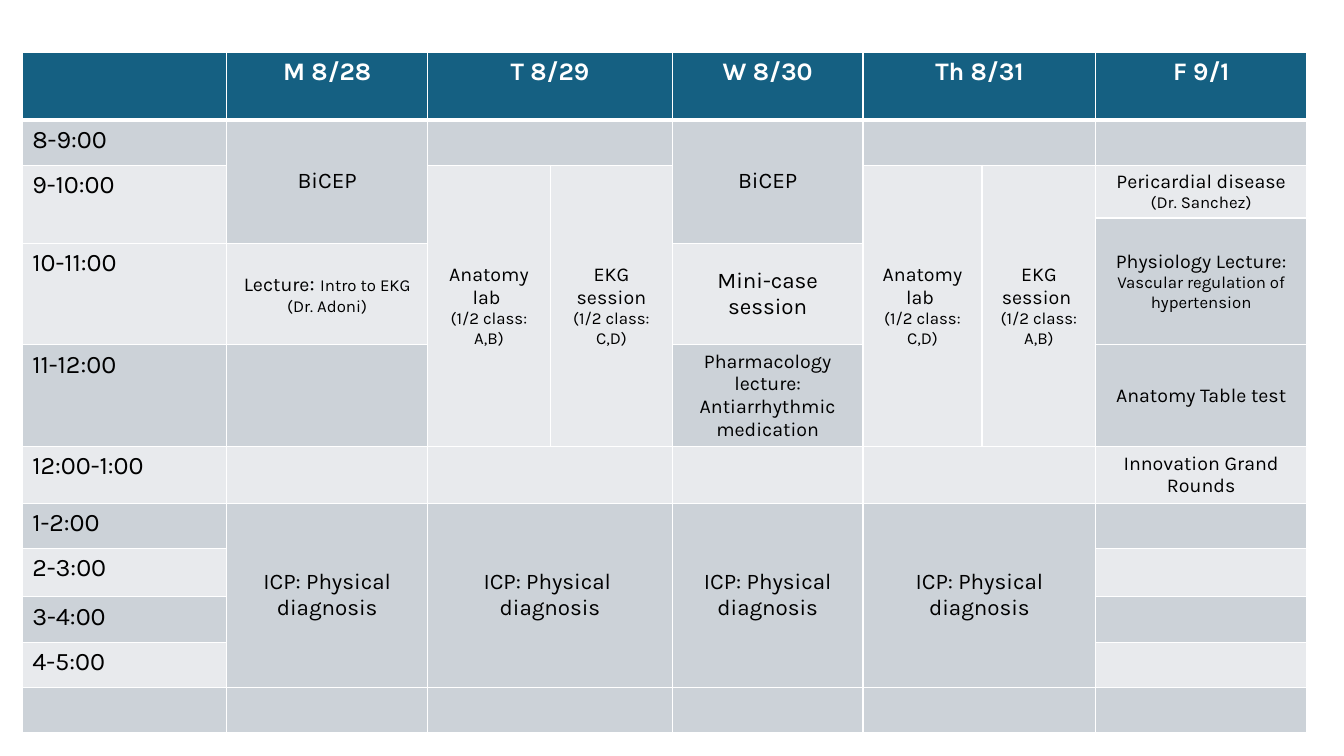
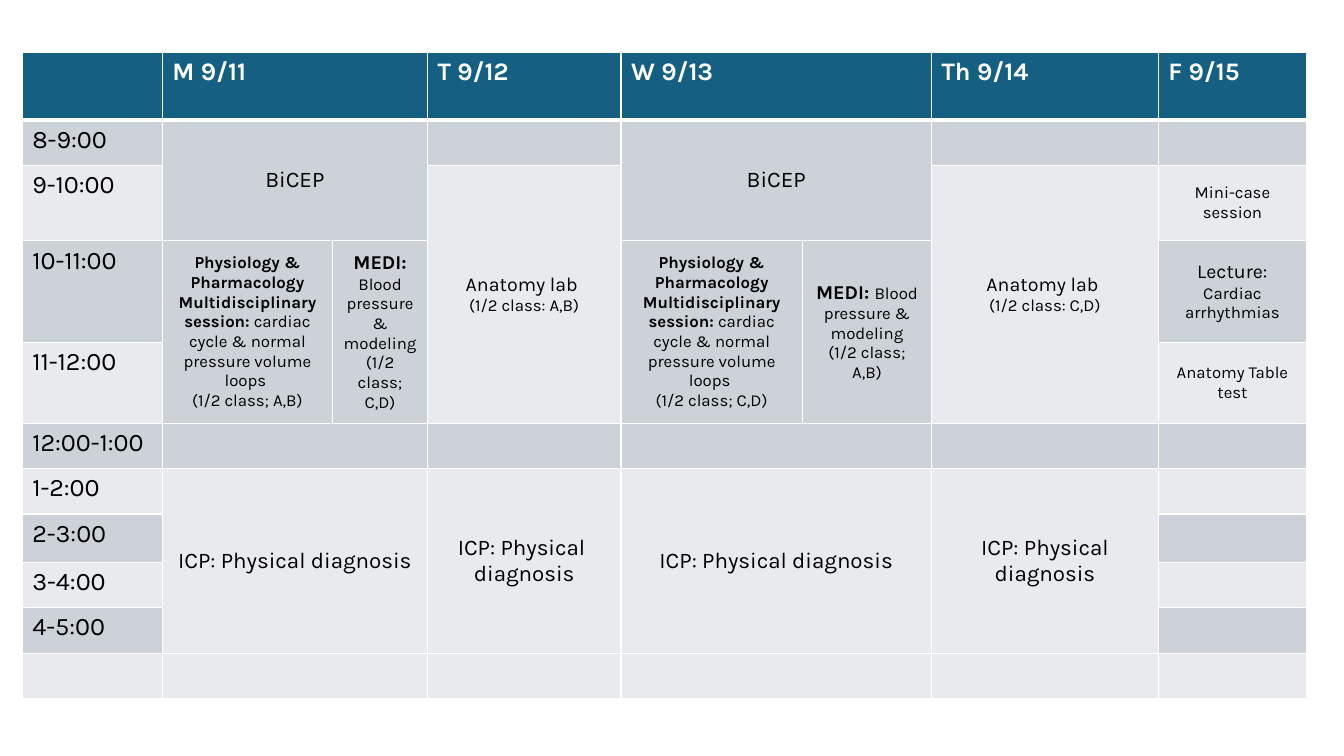
from dataclasses import dataclass

from lxml.etree import SubElement
from pptx import Presentation
from pptx.dml.color import RGBColor
from pptx.enum.text import MSO_ANCHOR as Anchor, PP_ALIGN as Align
from pptx.oxml.ns import qn
from pptx.util import Pt

PX = 9144  # 100 px to the inch
SLIDE_SIZE = (1333, 750)
TABLE_LEFT, TABLE_TOP = 22, 52

FONT = "Karla"
HEADER_BLUE = RGBColor(0x15, 0x60, 0x82)
DARK_BAND = RGBColor(0xCC, 0xD2, 0xD8)
LIGHT_BAND = RGBColor(0xE8, 0xEA, 0xED)
WHITE = RGBColor(0xFF, 0xFF, 0xFF)
BLACK = RGBColor(0x00, 0x00, 0x00)

HOURS = ["8-9:00", "9-10:00", "10-11:00", "11-12:00", "12:00-1:00",
         "1-2:00", "2-3:00", "3-4:00", "4-5:00"]


@dataclass
class Event:
    """A block of the timetable; each paragraph is a list of (text, size, bold)."""
    row: int
    column: int
    paragraphs: list
    rows: int = 1
    columns: int = 1


@dataclass
class Week:
    days: list          # (heading, first column, column count)
    heading_align: Align
    columns: list
    rows: list
    hour_rows: list     # (first row, row count) of each hour
    open_rows: list     # rows in which each day is one undivided cell
    events: list


# Content of the blocks
def plain(text, size):
    return [[(text, size, False)]]


def split_class(title, half):
    return plain(title, 14) + plain(f"(1/2 class: {half})", 12)


def physiology(half):
    return [[("Physiology & Pharmacology Multidisciplinary session:", 12, True),
             (" cardiac cycle & normal pressure volume loops ", 12, False)],
            [(f"(1/2 class; {half})", 12, False)]]


def modeling(half):
    return [[("MEDI: ", 14, True), ("Blood pressure & modeling", 12, False)],
            [(f"(1/2 class; {half})", 12, False)]]


def diagnosis_events(days, row):
    """Four afternoon hours on every day but Friday; Tuesday breaks its line."""
    events = []
    for index, (_, column, count) in enumerate(days[:4]):
        text = plain("ICP: Physical diagnosis", 16)
        if index == 1:
            text = plain("ICP: Physical ", 16) + plain("diagnosis", 16)
        events.append(Event(row, column, text, 4, count))
    return events


AUGUST_DAYS = [("M 8/28", 1, 1), ("T 8/29", 2, 2), ("W 8/30", 4, 1),
               ("Th 8/31", 5, 2), ("F 9/1", 7, 1)]
AUGUST = Week(
    days=AUGUST_DAYS,
    heading_align=Align.CENTER,
    columns=[203, 199, 122, 121, 189, 118, 113, 209],
    rows=[67, 45, 52, 25, 101, 101, 56, 45, 48, 45, 45, 45],
    hour_rows=[(1, 1), (2, 2)] + [(row, 1) for row in range(4, 11)],
    open_rows=[0, 1, 6, 11],
    events=[
        Event(1, 1, plain("BiCEP", 16), rows=3),
        Event(1, 4, plain("BiCEP", 16), rows=3),
        Event(2, 2, split_class("Anatomy lab ", "A,B"), rows=4),
        Event(2, 3, [[("EKG session ", 14, False),
                      ("(1/2 class: C,D)", 12, False)]], rows=4),
        Event(2, 5, split_class("Anatomy lab ", "C,D"), rows=4),
        Event(2, 6, split_class("EKG session ", "A,B"), rows=4),
        Event(2, 7, [[("Pericardial disease ", 14, False),
                      ("(Dr. Sanchez)", 12, False)]]),
        Event(3, 7, [[("Physiology Lecture:", 14, False),
                      (" Vascular regulation of hypertension", 12, False)]], rows=2),
        Event(4, 1, [[("Lecture", 14, False), (": ", 16, False),
                      ("Intro to EKG (Dr. Adoni)", 12, False)]]),
        Event(4, 4, plain("Mini-case session", 16)),
        Event(5, 4, plain("Pharmacology lecture: Antiarrhythmic medication", 14)),
        Event(5, 7, plain("Anatomy Table test", 14)),
        Event(6, 7, plain("Innovation Grand Rounds", 14)),
    ] + diagnosis_events(AUGUST_DAYS, 7),
)

SEPTEMBER_DAYS = [("M 9/11", 1, 2), ("T 9/12", 3, 1), ("W 9/13", 4, 2),
                  ("Th 9/14", 6, 1), ("F 9/15", 7, 1)]
SEPTEMBER = Week(
    days=SEPTEMBER_DAYS,
    heading_align=Align.LEFT,
    columns=[139, 169, 94, 192, 180, 128, 225, 147],
    rows=[67, 45, 75, 101, 80, 45, 45, 48, 45, 45, 45],
    hour_rows=[(row, 1) for row in range(1, 10)],
    open_rows=[0, 5, 10],
    events=[
        Event(1, 1, plain("BiCEP", 16), rows=2, columns=2),
        Event(1, 4, plain("BiCEP", 16), rows=2, columns=2),
        Event(2, 3, split_class("Anatomy lab ", "A,B"), rows=3),
        Event(2, 6, split_class("Anatomy lab ", "C,D"), rows=3),
        Event(2, 7, plain("Mini-case session", 12)),
        Event(3, 1, physiology("A,B"), rows=2),
        Event(3, 2, modeling("C,D"), rows=2),
        Event(3, 4, physiology("C,D"), rows=2),
        Event(3, 5, modeling("A,B"), rows=2),
        Event(3, 7, [[("Lecture: ", 14, False), ("Cardiac arrhythmias", 12, False)]]),
        Event(4, 7, plain("Anatomy Table test", 12)),
    ] + diagnosis_events(SEPTEMBER_DAYS, 6),
)


# Table parts
def set_borders(cell, top, bottom):
    """White lines on all four sides, widths in points."""
    properties = cell._tc.get_or_add_tcPr()
    for tag, width in (("a:lnL", 1), ("a:lnR", 1), ("a:lnT", top), ("a:lnB", bottom)):
        line = SubElement(properties, qn(tag), w=str(Pt(width)))
        fill = SubElement(line, qn("a:solidFill"))
        SubElement(fill, qn("a:srgbClr"), val=str(WHITE))


def style_cell(cell, row):
    """Blue header, then alternating bands, with a heavy line between them."""
    set_borders(cell, top=3 if row == 1 else 1, bottom=3 if row == 0 else 1)
    cell.fill.solid()
    band = DARK_BAND if row % 2 else LIGHT_BAND
    cell.fill.fore_color.rgb = band if row else HEADER_BLUE


def merge_block(table, row, column, rows, columns):
    if rows * columns > 1:
        last = table.cell(row + rows - 1, column + columns - 1)
        table.cell(row, column).merge(last)


def write_cell(cell, paragraphs, align, color=BLACK, anchor=Anchor.TOP):
    cell.vertical_anchor = anchor
    frame = cell.text_frame
    for index, runs in enumerate(paragraphs):
        paragraph = frame.add_paragraph() if index else frame.paragraphs[0]
        paragraph.alignment = align
        for text, size, bold in runs:
            run = paragraph.add_run()
            run.text = text
            run.font.name = FONT
            run.font.size = Pt(size)
            run.font.bold = bold
            run.font.color.rgb = color


def add_timetable(slide, week):
    frame = slide.shapes.add_table(
        len(week.rows), len(week.columns), TABLE_LEFT * PX, TABLE_TOP * PX,
        sum(week.columns) * PX, sum(week.rows) * PX)
    table = frame.table
    table.first_row = table.horz_banding = False
    for column, width in zip(table.columns, week.columns):
        column.width = width * PX
    for index, height in enumerate(week.rows):
        table.rows[index].height = height * PX
        for cell in table.rows[index].cells:
            style_cell(cell, index)

    # Day headings and undivided days
    for heading, column, count in week.days:
        for row in week.open_rows:
            merge_block(table, row, column, 1, count)
        write_cell(table.cell(0, column), [[(heading, 18, True)]],
                   week.heading_align, WHITE)

    # Hours
    for hour, (row, count) in zip(HOURS, week.hour_rows):
        merge_block(table, row, 0, count, 1)
        write_cell(table.cell(row, 0), plain(hour, 18), Align.LEFT)

    # Events
    for event in week.events:
        merge_block(table, event.row, event.column, event.rows, event.columns)
        write_cell(table.cell(event.row, event.column), event.paragraphs,
                   Align.CENTER, anchor=Anchor.MIDDLE)


def main():
    presentation = Presentation()
    presentation.slide_width, presentation.slide_height = (
        side * PX for side in SLIDE_SIZE)
    for week in (AUGUST, SEPTEMBER):
        slide = presentation.slides.add_slide(presentation.slide_layouts[6])
        add_timetable(slide, week)
    presentation.save("out.pptx")


if __name__ == "__main__":
    main()
